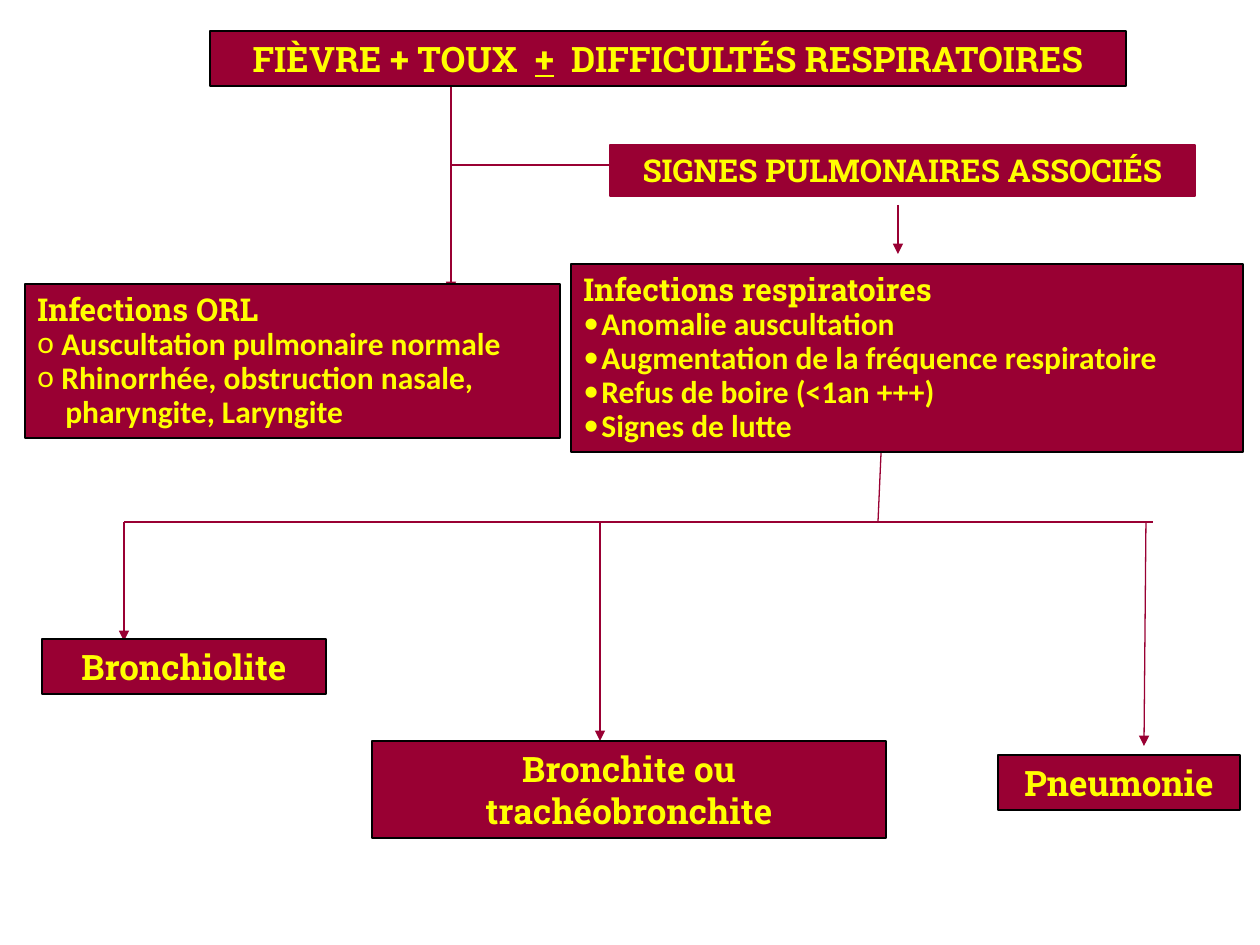
from lxml import etree
from pptx import Presentation
from pptx import util as u
from pptx.dml.color import RGBColor
from pptx.enum import shapes, text
from pptx.oxml.ns import qn

SCALE = 914400 / 126
WINE, GOLD, BLACK = "990033", "FFFF00", "000000"
SLAB, SANS = "Roboto Slab", "Calibri"


def px(n):
    return u.Emu(round(n * SCALE))


def tint(item, code):
    item.color.rgb = RGBColor.from_string(code)


deck = Presentation()
deck.slide_width, deck.slide_height = px(1260), px(945)
slide = deck.slides.add_slide(deck.slide_layouts[6])

# Connectors: x1, y1, x2, y2, width in points, arrowhead
lines = [
    (451, 86, 451, 292, 1.5, True),
    (451, 165, 610, 165, 0.75, False),
    (898, 205, 898, 254, 0.75, True),
    (882, 431, 878, 522, 0.75, False),
    (1153, 522, 124, 522, 0.75, False),
    (124, 522, 124, 641, 0.75, True),
    (600, 522, 600, 741, 0.75, True),
    (1146, 522, 1144, 746, 0.75, True),
]
for x1, y1, x2, y2, width, arrow in lines:
    link = slide.shapes.add_connector(
        shapes.MSO_CONNECTOR.STRAIGHT, px(x1), px(y1), px(x2), px(y2))
    tint(link.line, WINE)
    link.line.width = u.Pt(width)
    if arrow:
        etree.SubElement(link.line._get_or_add_ln(), qn("a:tailEnd"), type="triangle")
    etree.SubElement(link._element.spPr, qn("a:effectLst"))

# Boxes: left, top, width, height, border, heading size, heading runs,
# then items as (bullet, hanging indent, wording)
boxes = [
    (210, 31, 916, 55, BLACK, 20,
     ["FIÈVRE + TOUX  ", "+", "  DIFFICULTÉS RESPIRATOIRES"], []),
    (610, 145, 585, 51, WINE, 18, ["SIGNES PULMONAIRES ASSOCIÉS"], []),
    (25, 284, 535, 154, BLACK, 18, ["Infections ORL"], [
        ("o", 24, "Auscultation pulmonaire normale"),
        ("o", 24, "Rhinorrhée, obstruction nasale,"),
        ("", 28, "pharyngite, Laryngite")]),
    (571, 264, 672, 188, BLACK, 18, ["Infections respiratoires"], [
        ("•", 18, "Anomalie auscultation"),
        ("•", 18, "Augmentation de la fréquence respiratoire"),
        ("•", 18, "Refus de boire (<1an +++)"),
        ("•", 18, "Signes de lutte")]),
    (42, 639, 284, 55, BLACK, 20, ["Bronchiolite"], []),
    (372, 741, 514, 97, BLACK, 20, ["Bronchite ou trachéobronchite"], []),
    (998, 755, 242, 55, BLACK, 20, ["Pneumonie"], []),
]
for left, top, width, height, edge, size, head, items in boxes:
    box = slide.shapes.add_shape(
        shapes.MSO_SHAPE.RECTANGLE, px(left), px(top), px(width), px(height))
    box.shadow.inherit = False
    box.fill.solid()
    box.fill.fore_color.rgb = RGBColor.from_string(WINE)
    tint(box.line, edge)
    box.line.width = u.Pt(0.75)
    frame = box.text_frame
    form = {"word_wrap": True, "vertical_anchor": text.MSO_ANCHOR.TOP,
            "auto_size": text.MSO_AUTO_SIZE.SHAPE_TO_FIT_TEXT}
    for key, value in form.items():
        setattr(frame, key, value)

    # Heading
    para = frame.paragraphs[0]
    para.alignment = text.PP_ALIGN.LEFT if items else text.PP_ALIGN.CENTER
    for part in head:
        run = para.add_run()
        run.text = part
        style = {"name": SLAB, "size": u.Pt(size), "bold": True, "underline": part == "+"}
        for key, value in style.items():
            setattr(run.font, key, value)
        tint(run.font, GOLD)

    # Items
    for mark, hang, words in items:
        para = frame.add_paragraph()
        para.alignment = text.PP_ALIGN.LEFT
        para.line_spacing = 0.9
        props = para._p.get_or_add_pPr()
        props.set("marL", str(px(hang)))
        props.set("indent", str(-px(hang) if mark else 0))
        if mark:
            etree.SubElement(props, qn("a:buFont"), typeface=SANS)
            etree.SubElement(props, qn("a:buChar"), char=mark)
        run = para.add_run()
        run.text = words
        style = {"name": SANS, "size": u.Pt(size), "bold": True}
        for key, value in style.items():
            setattr(run.font, key, value)
        tint(run.font, GOLD)

deck.save("out.pptx")
